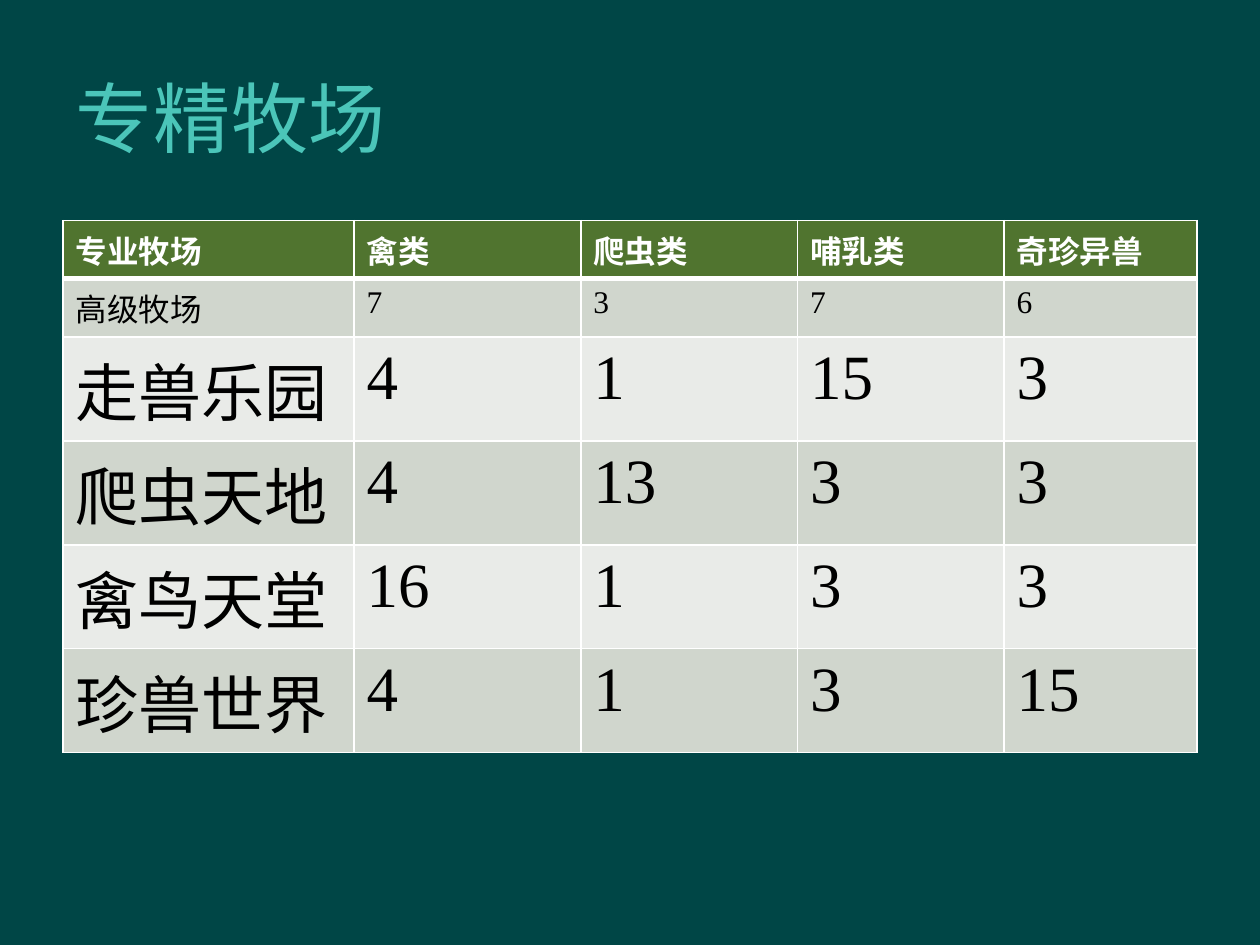
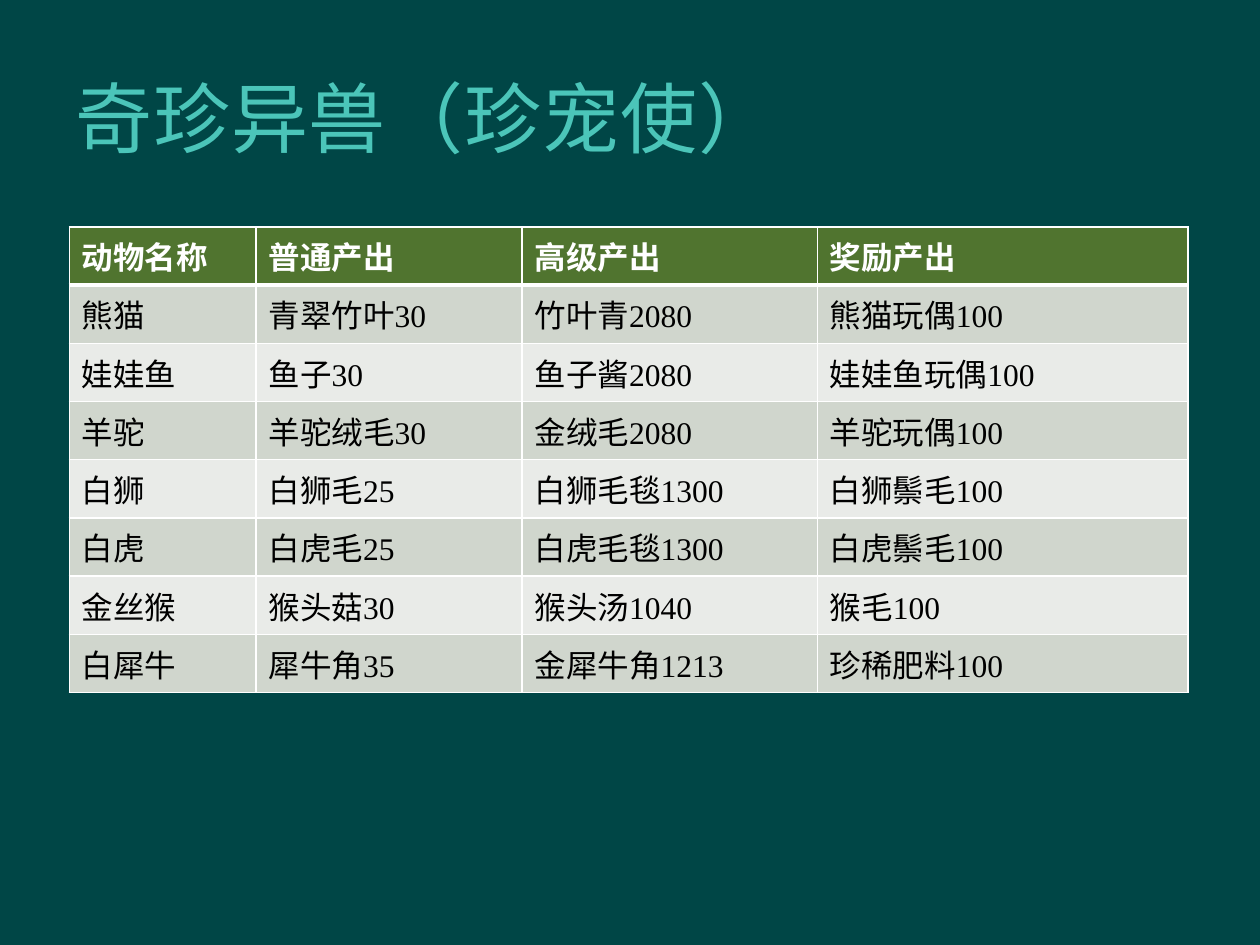
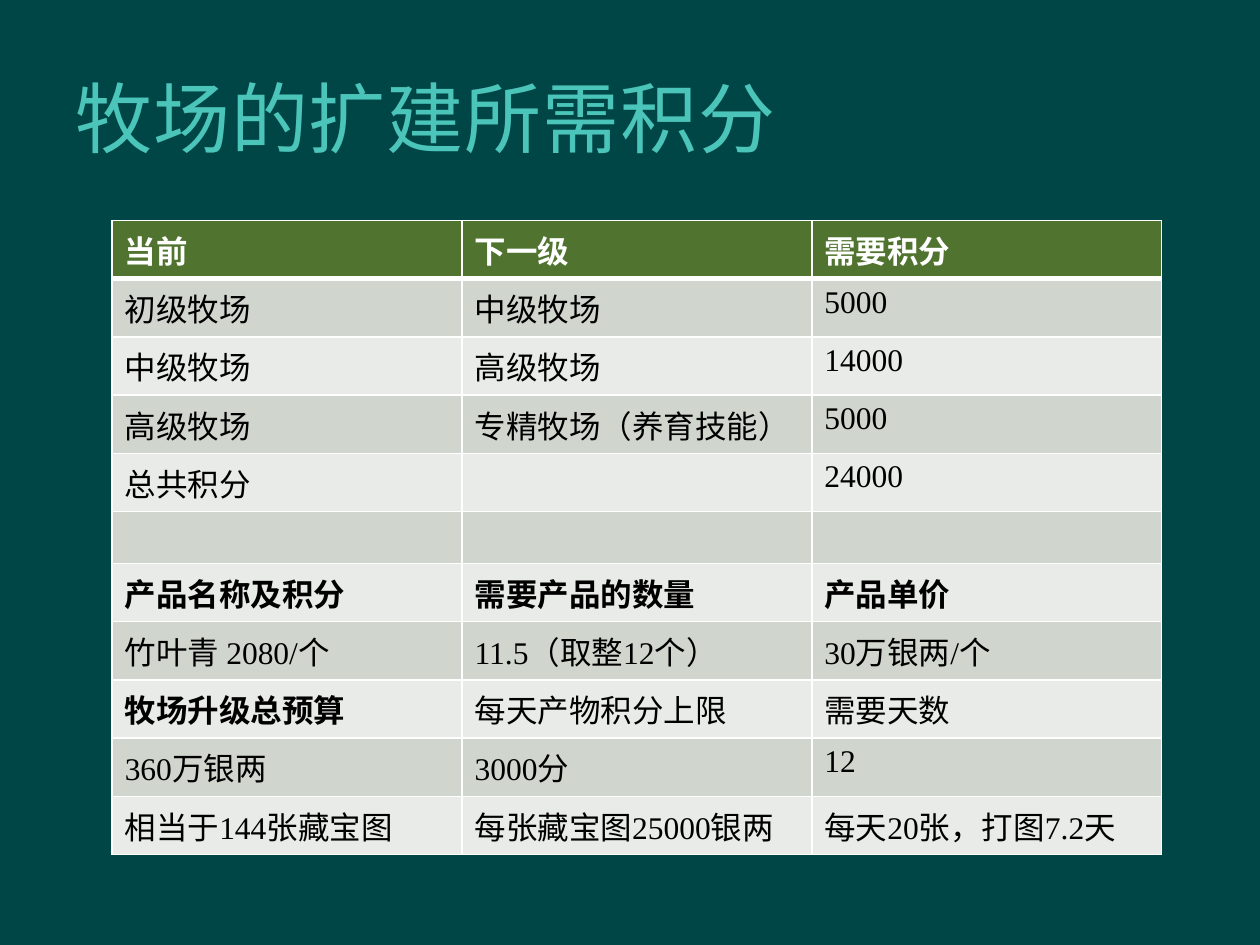
"""Build three ranch guide pages, each with a title and a banded table."""
from dataclasses import dataclass

from pptx import Presentation
from pptx.dml.color import RGBColor
from pptx.enum.text import MSO_ANCHOR
from pptx.oxml import parse_xml
from pptx.oxml.ns import nsdecls
from pptx.util import Inches, Pt


@dataclass(frozen=True)
class Theme:
    """Colours, fonts and type sizes of the deck."""
    background: str = "004646"
    title: str = "4BC5B9"
    header: str = "50742F"
    bands: tuple = ("D0D6CD", "E9EBE8")
    border: str = "FFFFFF"
    header_text: str = "FFFFFF"
    body_text: str = "000000"
    title_font: str = "Arial"
    table_font: str = "Times New Roman"
    title_size: int = 44
    body_size: int = 18
    large_size: int = 36
    thin_line: int = 1
    thick_line: int = 3


THEME = Theme()
TITLE_AREA = (0.5, 0.3, 8.5, 1.25)
EMPTY_ROW_HEIGHT = 0.41
CELL_PADDING = 0.1
LINE_SPACING = 1.45

PAGES = [
    {
        "title": "专精牧场",
        "place": (0.5, 1.75),
        "width": 9,
        "columns": (2.31, 1.8, 1.72, 1.64, 1.53),
        "large_from": 2,
        "rows": [
            ("专业牧场", "禽类", "爬虫类", "哺乳类", "奇珍异兽"),
            ("高级牧场", "7", "3", "7", "6"),
            ("走兽乐园", "4", "1", "15", "3"),
            ("爬虫天地", "4", "13", "3", "3"),
            ("禽鸟天堂", "16", "1", "3", "3"),
            ("珍兽世界", "4", "1", "3", "15"),
        ],
    },
    {
        "title": "奇珍异兽（珍宠使）",
        "place": (0.55, 1.8),
        "width": 8.88,
        "columns": (1.48, 2.11, 2.34, 2.94),
        "rows": [
            ("动物名称", "普通产出", "高级产出", "奖励产出"),
            ("熊猫", "青翠竹叶30", "竹叶青2080", "熊猫玩偶100"),
            ("娃娃鱼", "鱼子30", "鱼子酱2080", "娃娃鱼玩偶100"),
            ("羊驼", "羊驼绒毛30", "金绒毛2080", "羊驼玩偶100"),
            ("白狮", "白狮毛25", "白狮毛毯1300", "白狮鬃毛100"),
            ("白虎", "白虎毛25", "白虎毛毯1300", "白虎鬃毛100"),
            ("金丝猴", "猴头菇30", "猴头汤1040", "猴毛100"),
            ("白犀牛", "犀牛角35", "金犀牛角1213", "珍稀肥料100"),
        ],
    },
    {
        "title": "牧场的扩建所需积分",
        "place": (0.89, 1.75),
        "width": 8.33,
        "columns": (1, 1, 1),
        "bold": {"产品名称及积分", "需要产品的数量", "产品单价", "牧场升级总预算"},
        "rows": [
            ("当前", "下一级", "需要积分"),
            ("初级牧场", "中级牧场", "5000"),
            ("中级牧场", "高级牧场", "14000"),
            ("高级牧场", "专精牧场（养育技能）", "5000"),
            ("总共积分", "", "24000"),
            ("", "", ""),
            ("产品名称及积分", "需要产品的数量", "产品单价"),
            ("竹叶青 2080/个", "11.5（取整12个）", "30万银两/个"),
            ("牧场升级总预算", "每天产物积分上限", "需要天数"),
            ("360万银两", "3000分", "12"),
            ("相当于144张藏宝图", "每张藏宝图25000银两", "每天20张，打图7.2天"),
        ],
    },
]


def paint(fill, color):
    fill.solid()
    fill.fore_color.rgb = RGBColor.from_string(color)


def write(para, text, color, **formats):
    span = para.add_run()
    span.text = text
    for name, value in formats.items():
        setattr(span.font, name, value)
    span.font.color.rgb = RGBColor.from_string(color)
    return span


def add_title(page, text):
    box = page.shapes.add_textbox(*map(Inches, TITLE_AREA))
    frame = box.text_frame
    frame.word_wrap = True
    frame.vertical_anchor = MSO_ANCHOR.MIDDLE
    span = write(frame.paragraphs[0], text, THEME.title,
                 name=THEME.title_font, size=Pt(THEME.title_size))
    span.font._element.set("spc", "50")


def add_borders(cell, row):
    widths = {
        "lnL": THEME.thin_line,
        "lnR": THEME.thin_line,
        "lnT": THEME.thick_line if row == 1 else THEME.thin_line,
        "lnB": THEME.thick_line if row == 0 else THEME.thin_line,
    }
    properties = cell._tc.get_or_add_tcPr()
    for side, width in widths.items():
        properties.append(parse_xml(
            f'<a:{side} {nsdecls("a")} w="{Pt(width)}"><a:solidFill>'
            f'<a:srgbClr val="{THEME.border}"/></a:solidFill></a:{side}>'))


def fill_cell(cell, text, row, size, bold_texts):
    is_header = row == 0
    add_borders(cell, row)
    paint(cell.fill, THEME.header if is_header else THEME.bands[(row - 1) % 2])
    if text:
        write(cell.text_frame.paragraphs[0], text,
              THEME.header_text if is_header else THEME.body_text,
              name=THEME.table_font, size=Pt(size),
              bold=is_header or text in bold_texts)


def row_height(texts, size):
    if not any(texts):
        return Inches(EMPTY_ROW_HEIGHT)
    return Inches(CELL_PADDING) + Pt(size * LINE_SPACING)


def add_grid(page, content):
    rows, columns = content["rows"], content["columns"]
    large_from = content.get("large_from", len(rows))
    sizes = [THEME.body_size if index < large_from else THEME.large_size
             for index in range(len(rows))]
    heights = [row_height(texts, size) for texts, size in zip(rows, sizes)]
    left, top = map(Inches, content["place"])
    width = Inches(content["width"])
    table = page.shapes.add_table(
        len(rows), len(columns), left, top, width, sum(heights)).table
    for column, share in zip(table.columns, columns):
        column.width = int(width * share / sum(columns))
    for index, texts in enumerate(rows):
        table.rows[index].height = heights[index]
        for cell, text in zip(table.rows[index].cells, texts):
            fill_cell(cell, text, index, sizes[index], content.get("bold", ()))


def main():
    deck = Presentation()
    deck.slide_width, deck.slide_height = Inches(10), Inches(7.5)
    for content in PAGES:
        page = deck.slides.add_slide(deck.slide_layouts[6])
        paint(page.background.fill, THEME.background)
        add_title(page, content["title"])
        add_grid(page, content)
    deck.save("out.pptx")


if __name__ == "__main__":
    main()
